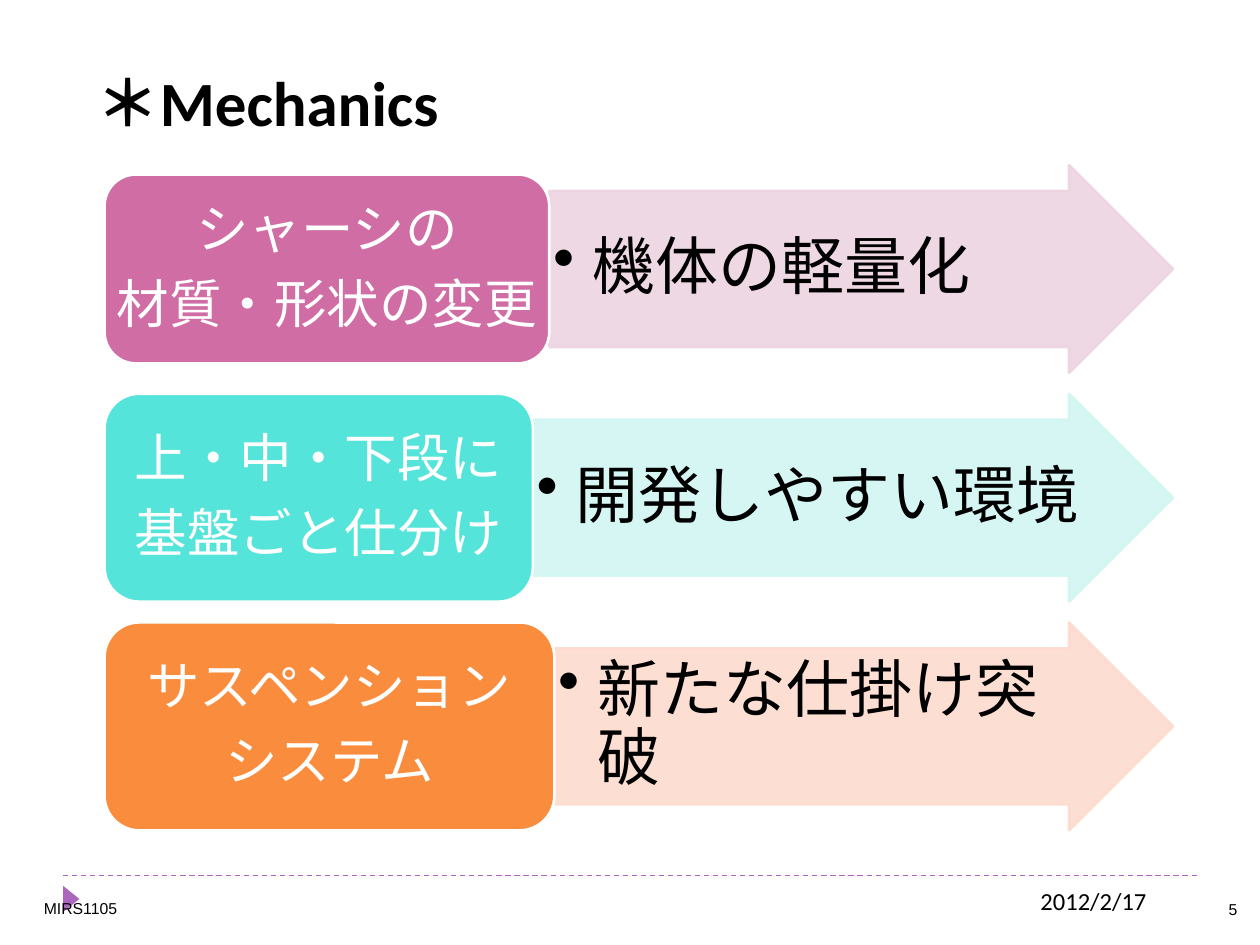
from dataclasses import dataclass

import pptx
import pptx.util
import pptx.dml.color
import pptx.enum.dml
import pptx.enum.shapes
import pptx.enum.text
from lxml import etree
from pptx.oxml.ns import qn

Inches, Pt = pptx.util.Inches, pptx.util.Pt
SHAPE = pptx.enum.shapes.MSO_SHAPE
ALIGN = pptx.enum.text.PP_ALIGN
ANCHOR = pptx.enum.text.MSO_ANCHOR

LEFT, RIGHT = 0.83, 9.31
TOP, PITCH, ROW_H = 1.31, 1.815, 1.65
ACCENT = "AC66BB"


@dataclass
class Row:
    topic: list[str]
    effect: str
    box_w: float
    box_h: float
    box_color: str
    arrow_color: str


ROWS = [
    Row(["シャーシの", "材質・形状の変更"], "機体の軽量化", 3.53, 1.5, "CF6DA4", "EDD4E0"),
    Row(["上・中・下段に", "基盤ごと仕分け"], "開発しやすい環境", 3.4, 1.65, "55E4DA", "D1F6F2"),
    Row(["サスペンション", "システム"], "新たな仕掛け突破", 3.57, 1.65, "FA8D3D", "FDDBCE"),
]


def rgb(color: str) -> pptx.dml.color.RGBColor:
    return pptx.dml.color.RGBColor.from_string(color)


def set_alpha(sp, percent: int) -> None:
    """Make the fill and line colours of a shape partly transparent."""
    for clr in sp._element.spPr.iter(qn("a:srgbClr")):
        etree.SubElement(clr, qn("a:alpha"), val=str(percent * 1000))


def set_frame(sp, margins: tuple, anchor):
    tf = sp.text_frame
    left, top, right, bottom = (Inches(m) for m in margins)
    fmt = {"margin_left": left, "margin_top": top, "margin_right": right,
           "margin_bottom": bottom, "vertical_anchor": anchor, "word_wrap": True}
    for name, value in fmt.items():
        setattr(tf, name, value)
    return tf


def add_run(p, text: str, size: float, font: str = "Calibri",
            color: str = "000000", bold: bool = False) -> None:
    r = p.add_run()
    r.text = text
    for name, value in {"size": Pt(size), "name": font, "bold": bold}.items():
        setattr(r.font, name, value)
    r.font.color.rgb = rgb(color)
    # Same font for East Asian characters
    etree.SubElement(r._r.get_or_add_rPr(), qn("a:ea"), typeface=font)


def add_shape(s, kind, x: float, y: float, w: float, h: float, fill: str, line: str = ""):
    sp = s.shapes.add_shape(kind, Inches(x), Inches(y), Inches(w), Inches(h))
    sp.shadow.inherit = False
    sp.fill.solid()
    sp.fill.fore_color.rgb = rgb(fill)
    if line:
        sp.line.color.rgb = rgb(line)
        sp.line.width = Pt(1.5)
    else:
        sp.line.fill.background()
    return sp


def add_text(s, x: float, y: float, w: float, h: float, anchor=ANCHOR.MIDDLE,
             margins: tuple = (0.1, 0.05, 0.1, 0.05), align=ALIGN.LEFT):
    tb = s.shapes.add_textbox(Inches(x), Inches(y), Inches(w), Inches(h))
    p = set_frame(tb, margins, anchor).paragraphs[0]
    p.alignment = align
    return p


def add_bullet(p, indent: float) -> None:
    pPr = p._p.get_or_add_pPr()
    pPr.set("marL", str(Inches(indent)))
    pPr.set("indent", str(-Inches(indent)))
    etree.SubElement(pPr, qn("a:buChar"), char="•")


def add_row(s, row: Row, y: float) -> None:
    # Arrow with the effect
    x = LEFT + row.box_w
    arrow = add_shape(s, SHAPE.RIGHT_ARROW, x, y, RIGHT - x, ROW_H,
                      row.arrow_color, row.arrow_color)
    arrow.adjustments[0], arrow.adjustments[1] = 0.75, 0.5
    set_alpha(arrow, 90)
    p = set_frame(arrow, (0.03, 0.03, 0.03, 0.03), ANCHOR.MIDDLE).paragraphs[0]
    p.alignment, p.line_spacing, p.space_after = ALIGN.LEFT, 0.9, Pt(5.4)
    add_bullet(p, 0.31)
    add_run(p, row.effect, 36)

    # Rounded box with the topic; narrow side margins keep each line whole
    box = add_shape(s, SHAPE.ROUNDED_RECTANGLE, LEFT, y + (ROW_H - row.box_h) / 2,
                    row.box_w, row.box_h, row.box_color, "FFFFFF")
    tf = set_frame(box, (0, 0.06, 0, 0.06), ANCHOR.MIDDLE)
    for i, text in enumerate(row.topic):
        p = tf.add_paragraph() if i else tf.paragraphs[0]
        p.alignment, p.line_spacing, p.space_after = ALIGN.CENTER, 0.9, Pt(10.5)
        add_run(p, text, 30, color="FFFFFF")


def main() -> None:
    prs = pptx.Presentation()
    prs.slide_width, prs.slide_height = Inches(10), Inches(7.5)
    s = prs.slides.add_slide(prs.slide_layouts[6])

    # Footer rule and marker
    rule = s.shapes.add_connector(pptx.enum.shapes.MSO_CONNECTOR.STRAIGHT,
                                  Inches(0.5), Inches(6.95), Inches(9.5), Inches(6.95))
    rule.line.color.rgb = rgb(ACCENT)
    rule.line.width = Pt(0.75)
    rule.line.dash_style = pptx.enum.dml.MSO_LINE.DASH
    etree.SubElement(rule._element.spPr, qn("a:effectLst"))
    marker = add_shape(s, SHAPE.ISOSCELES_TRIANGLE, 0.46, 7.07, 0.21, 0.13, ACCENT)
    marker.rotation = 90

    # Title
    p = add_text(s, 0.67, 0.45, 8.58, 0.7, ANCHOR.BOTTOM)
    add_run(p, "＊", 36, "Arial", bold=True)
    add_run(p, "Mechanics", 36, bold=True)

    # Footer texts
    add_run(add_text(s, 0.25, 7.08, 7.33, 0.25), "MIRS1105", 9, "Arial")
    p = add_text(s, 9.32, 7.14, 0.5, 0.15, margins=(0, 0, 0, 0), align=ALIGN.RIGHT)
    add_run(p, "5", 9, "Arial")

    # Topics and their effects
    for i, row in enumerate(ROWS):
        add_row(s, row, TOP + i * PITCH)

    # Date
    add_run(add_text(s, 8.16, 6.98, 1.33, 0.4, ANCHOR.TOP), "2012/2/17", 14)

    prs.save("out.pptx")


if __name__ == "__main__":
    main()
